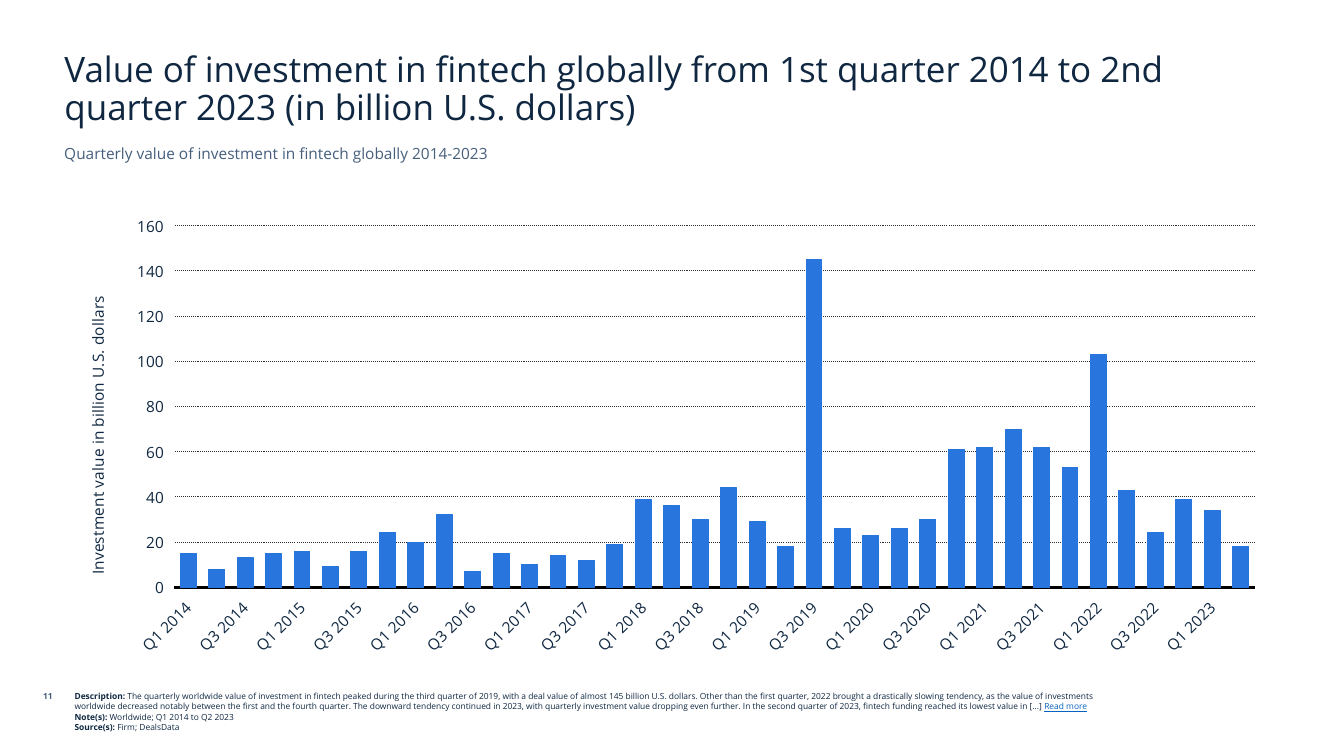
from dataclasses import dataclass
from lxml import etree
from pptx import Presentation
from pptx import util as u
from pptx.chart import data as cd
from pptx.dml import color, line
from pptx.enum import chart as ce, dml, text
from pptx.oxml import parse_xml
from pptx.oxml.ns import qn, nsdecls


@dataclass
class Theme:
    font: str = "Open Sans"
    ink: str = "0F2741"
    soft: str = "455F7C"
    link: str = "0563C1"
    bar: str = "2875DD"
    grid: str = "2F2F2F"
    axis: str = "000000"
    big: int = 25
    mid: int = 11
    small: int = 6


theme = Theme()
rgb = color.RGBColor.from_string


def style(font, size, tone=theme.ink, bold=False):
    font.name = theme.font
    font.size = u.Pt(size)
    font.bold = bold
    font.color.rgb = rgb(tone)


def add_box(left, top, width, height, words, size, tone, bold=False):
    box = slide.shapes.add_textbox(u.Cm(left), u.Cm(top), u.Cm(width), u.Cm(height))
    frame = box.text_frame
    frame.word_wrap = True
    frame.text = words
    for para in frame.paragraphs:
        for run in para.runs:
            style(run.font, size, tone, bold)
    return frame


deck = Presentation()
deck.slide_width, deck.slide_height = u.Cm(33.87), u.Cm(19.05)
slide = deck.slides.add_slide(deck.slide_layouts[5])

title = slide.shapes.title
title.left, title.top = u.Cm(1.37), u.Cm(1.17)
title.width, title.height = u.Cm(31.09), u.Cm(2.18)
frame = title.text_frame
frame.text = "Value of investment in fintech globally from 1st quarter 2014 to 2nd quarter 2023 (in billion U.S. dollars)"
frame.auto_size = text.MSO_AUTO_SIZE.NONE
frame.vertical_anchor = text.MSO_ANCHOR.BOTTOM
para = frame.paragraphs[0]
para.alignment = text.PP_ALIGN.LEFT
para.line_spacing = 0.9
para.space_before = u.Pt(0)
style(para.runs[0].font, theme.big)

add_box(1.37, 3.51, 31.09, 0.86, "Quarterly value of investment in fintech globally 2014-2023", theme.mid, theme.soft)

values = [15, 8, 13, 15, 16, 9, 16, 24, 20, 32, 7, 15, 10, 14, 12, 19, 39, 36, 30, 44,
          29, 18, 145, 26, 23, 26, 30, 61, 62, 70, 62, 53, 103, 43, 24, 39, 34, 18]
data = cd.CategoryChartData()
data.categories = [f"Q{i % 4 + 1} {2014 + i // 4}" for i in range(len(values))]
data.add_series("Series 1", values)
chart = slide.shapes.add_chart(
    ce.XL_CHART_TYPE.COLUMN_CLUSTERED, u.Cm(1.63), u.Cm(5.23), u.Cm(30.61), u.Cm(11.53), data).chart
chart.has_title = False
chart.has_legend = False
style(chart.font, theme.mid)

plot = chart.plots[0]
plot.gap_width = 80
plot.overlap = -30
plot.vary_by_categories = False
bars = plot.series[0].format
bars.fill.solid()
bars.fill.fore_color.rgb = rgb(theme.bar)
bars.line.color.rgb = rgb(theme.bar)
bars.line.width = u.Pt(0.75)

base, scale = chart.category_axis, chart.value_axis
for axis in (base, scale):
    axis.major_tick_mark = axis.minor_tick_mark = ce.XL_TICK_MARK.NONE
    axis.tick_label_position = ce.XL_TICK_LABEL_POSITION.LOW
    style(axis.tick_labels.font, theme.mid)
base.has_major_gridlines = False
base.format.line.color.rgb = rgb(theme.axis)
base.format.line.width = u.Pt(2)
base._element.find(qn("c:txPr")).find(qn("a:bodyPr")).set("rot", "-2700000")
skip = etree.Element(qn("c:tickLblSkip"), val="2")
base._element.find(qn("c:noMultiLvlLbl")).addprevious(skip)

scale.minimum_scale, scale.maximum_scale, scale.major_unit = 0, 160, 20
scale.tick_labels.number_format = "#,##0"
scale.tick_labels.number_format_is_linked = False
scale.format.line.fill.background()
grid = scale.major_gridlines.format.line
grid.color.rgb = rgb(theme.grid)
grid.width = u.Pt(0.75)
grid.dash_style = dml.MSO_LINE.ROUND_DOT
label = scale.axis_title.text_frame
label.text = "Investment value in billion U.S. dollars"
style(label.paragraphs[0].runs[0].font, theme.mid)

area = chart._chartSpace.chart.plotArea
for old in area.findall(qn("c:layout")):
    area.remove(old)
area.insert(0, parse_xml(
    f'<c:layout {nsdecls("c")}><c:manualLayout><c:layoutTarget val="inner"/>'
    '<c:xMode val="edge"/><c:yMode val="edge"/><c:x val="0.09"/><c:y val="0.04"/>'
    '<c:w val="0.89"/><c:h val="0.79"/></c:manualLayout></c:layout>'))

page = add_box(-0.25, 17.3, 1.83, 0.76, "11", theme.small, theme.soft, True)
page.paragraphs[0].alignment = text.PP_ALIGN.RIGHT

notes = [
    ("Description: ", "The quarterly worldwide value of investment in fintech peaked during the third quarter of 2019, "
     "with a deal value of almost 145 billion U.S. dollars. Other than the first quarter, 2022 brought a drastically "
     "slowing tendency, as the value of investments worldwide decreased notably between the first and the fourth "
     "quarter. The downward tendency continued in 2023, with quarterly investment value dropping even further. In the "
     "second quarter of 2023, fintech funding reached its lowest value in [...] "),
    ("Note(s): ", "Worldwide; Q1 2014 to Q2 2023"),
    ("Source(s): ", "Firm; DealsData"),
]
foot = add_box(1.63, 17.3, 26.59, 1.47, "\n".join(head for head, body in notes), theme.small, theme.ink, True)
for para, (head, body) in zip(foot.paragraphs, notes):
    run = para.add_run()
    run.text = body
    style(run.font, theme.small)
more = foot.paragraphs[0].add_run()
more.text = "Read more"
style(more.font, theme.small, theme.link)
more.font.underline = True

deck.save("out.pptx")
